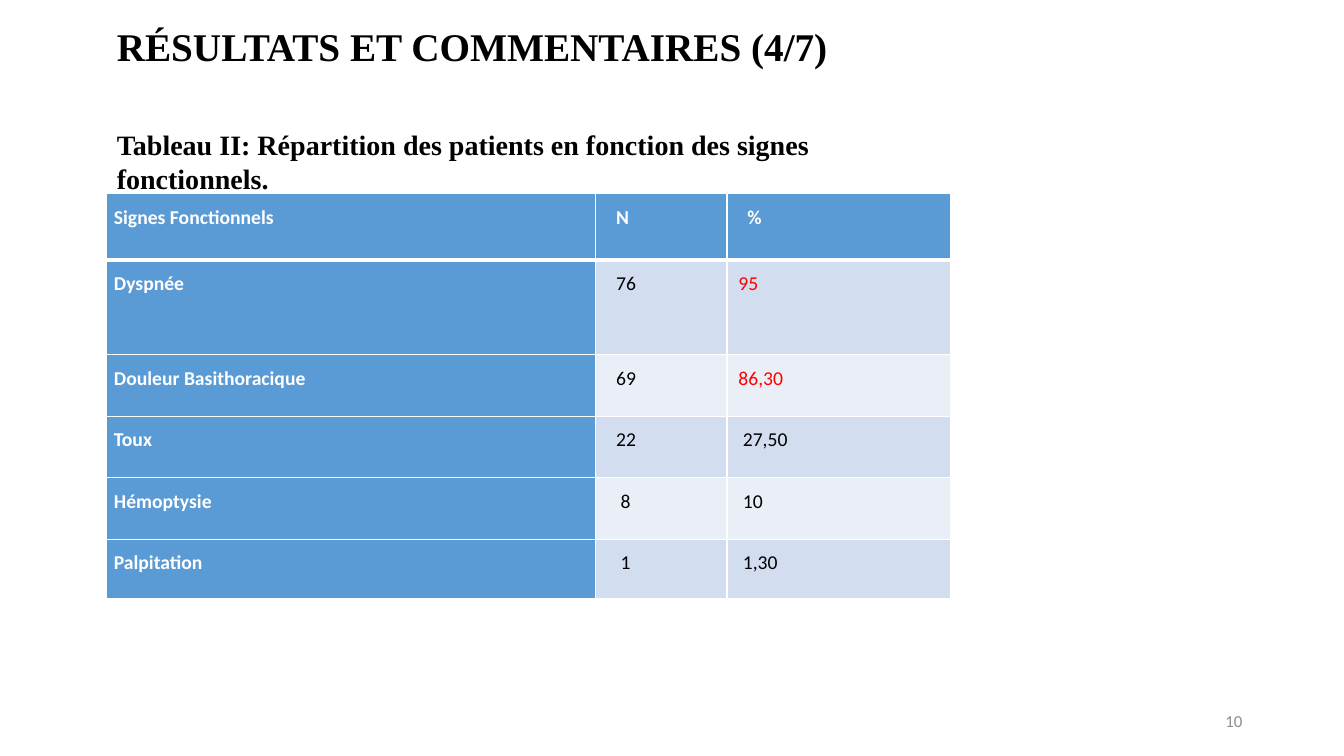
from pptx import Presentation
from pptx.dml.color import RGBColor
from pptx.enum.text import MSO_ANCHOR, PP_ALIGN
from pptx.oxml.ns import qn
from pptx.util import Inches, Pt
from lxml.etree import SubElement


def color(value):
    return RGBColor.from_string(value)


def write(tf, text, fill, align=PP_ALIGN.LEFT, **font):
    tf.word_wrap = True
    p = tf.paragraphs[0]
    p.alignment = align
    r = p.add_run()
    r.text = text
    for name, value in font.items():
        setattr(r.font, name, value)
    r.font.color.rgb = color(fill)
    return p


prs = Presentation()
prs.slide_width, prs.slide_height = Inches(13.33), Inches(7.5)
s = prs.slides.add_slide(prs.slide_layouts[6])

# Table: text and left indent (in spaces' widths) of each cell
rows = [
    [("Signes Fonctionnels", 0), ("N", 3), ("%", 3)],
    [("Dyspnée", 0), ("76", 3), ("95", 1)],
    [("Douleur Basithoracique", 0), ("69", 3), ("86,30", 1)],
    [("Toux", 0), ("22", 3), ("27,50", 2)],
    [("Hémoptysie", 0), ("8", 4), ("10", 2)],
    [("Palpitation", 0), ("1", 4), ("1,30", 2)],
]
widths = [4.85, 1.3, 2.22]
heights = [0.66, 0.94, 0.61, 0.61, 0.61, 0.59]
red_values = ("95", "86,30")
space = 0.044

table = s.shapes.add_table(len(rows), len(widths), Inches(1.06), Inches(1.92),
                           Inches(sum(widths)), Inches(sum(heights))).table
for column, width in zip(table.columns, widths):
    column.width = Inches(width)
for row, height in zip(table.rows, heights):
    row.height = Inches(height)

for i, row in enumerate(rows):
    for j, (text, indent) in enumerate(row):
        cell = table.cell(i, j)
        heading = i == 0 or j == 0
        cell.margin_left = Inches(0.07 + indent * space)
        cell.margin_right = Inches(0.07)
        cell.margin_top = cell.margin_bottom = 0

        # White borders, thicker under the header row
        tcPr = cell._tc.get_or_add_tcPr()
        for side in ("L", "R", "T", "B"):
            thick = (i, side) in ((0, "B"), (1, "T"))
            ln = SubElement(tcPr, qn(f"a:ln{side}"), w=str(Pt(3 if thick else 1)))
            SubElement(SubElement(ln, qn("a:solidFill")), qn("a:srgbClr"), val="FFFFFF")

        cell.fill.solid()
        band = "D2DEEF" if i % 2 else "EAEFF7"
        cell.fill.fore_color.rgb = color("5B9BD5" if heading else band)
        ink = "FFFFFF" if heading else "FF0000" if text in red_values else "000000"
        p = write(cell.text_frame, text, ink, name="Calibri", size=Pt(14), bold=heading)
        p.line_spacing = 1.5
        p.space_after = Pt(8)

# Caption, title and slide number
serif = dict(name="Times New Roman", bold=True)
texts = [
    ("Tableau II: Répartition des patients en fonction des signes fonctionnels.",
     (1.06, 1.22, 8.19, 0.77), "000000", dict(serif, size=Pt(20))),
    ("RÉSULTATS ET COMMENTAIRES (4/7)",
     (1.06, 0.17, 8.52, 0.57), "000000", dict(serif, size=Pt(28))),
    ("10", (9.42, 6.95, 3, 0.4), "8C8C8C",
     dict(name="Calibri", size=Pt(12), align=PP_ALIGN.RIGHT)),
]
for text, box, ink, style in texts:
    sp = s.shapes.add_textbox(*map(Inches, box))
    write(sp.text_frame, text, ink, **style)
sp.text_frame.vertical_anchor = MSO_ANCHOR.MIDDLE

prs.save("out.pptx")
